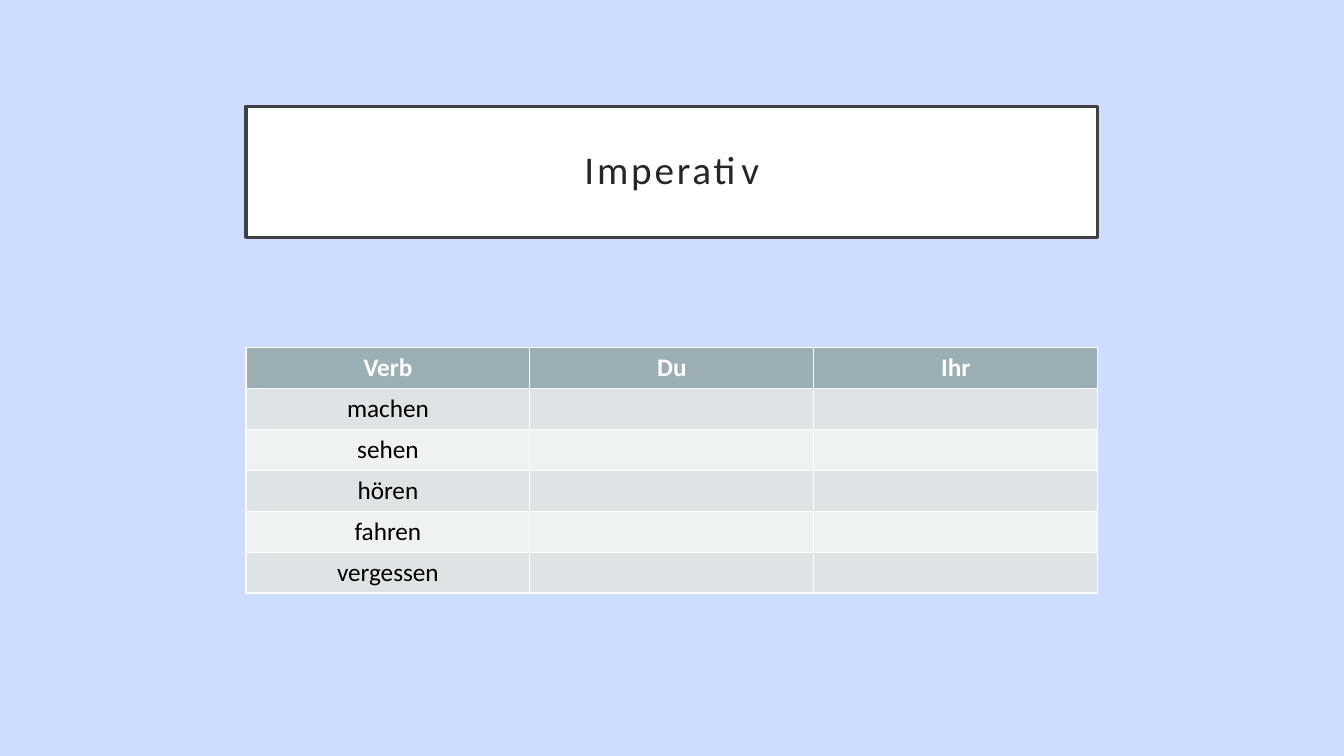
from pptx import Presentation
from pptx.dml.color import RGBColor
from pptx.enum.text import MSO_ANCHOR, PP_ALIGN
from pptx.util import Pt

BACKGROUND = RGBColor(0xCD, 0xDC, 0xFF)
WHITE = RGBColor(0xFF, 0xFF, 0xFF)
BLACK = RGBColor(0x00, 0x00, 0x00)
FRAME = RGBColor(0x40, 0x40, 0x40)
TITLE_TEXT = RGBColor(0x26, 0x26, 0x26)
HEADER_FILL = RGBColor(0x9B, 0xAF, 0xB5)
BANDS = [RGBColor(0xDE, 0xE3, 0xE5), RGBColor(0xEF, 0xF2, 0xF3)]

FONT = "Calibri"
LEFT, WIDTH = Pt(175.7), Pt(608.4)
ROW_HEIGHT = 29.2
HEADINGS = ["Verb", "Du", "Ihr"]
VERBS = ["machen", "sehen", "hören", "fahren", "vergessen"]


def add_centred_run(para, text, size, color, bold=False):
    para.alignment = PP_ALIGN.CENTER
    span = para.add_run()
    span.text = text
    span.font.name = FONT
    span.font.size = Pt(size)
    span.font.bold = bold
    span.font.color.rgb = color
    return span


deck = Presentation()
deck.slide_width, deck.slide_height = Pt(960), Pt(540)
page = deck.slides.add_slide(deck.slide_layouts[5])
page.background.fill.solid()
page.background.fill.fore_color.rgb = BACKGROUND

# Framed title
title = page.shapes.title
title.left, title.top, title.width, title.height = LEFT, Pt(75.9), WIDTH, Pt(93.6)
title.fill.solid()
title.fill.fore_color.rgb = WHITE
title.line.color.rgb = FRAME
title.line.width = Pt(2.5)
frame = title.text_frame
frame.word_wrap = True
frame.vertical_anchor = MSO_ANCHOR.MIDDLE
frame.margin_left = frame.margin_right = Pt(14.4)
frame.margin_top = frame.margin_bottom = Pt(14.4)
para = frame.paragraphs[0]
para.line_spacing = 0.9
span = add_centred_run(para, "Imperativ", 28, TITLE_TEXT)
span.font._element.set("spc", "200")  # letter spacing of 2 pt

# Verb table; the default table style draws the white grid
rows = [HEADINGS] + [[verb, "", ""] for verb in VERBS]
table = page.shapes.add_table(
    len(rows), len(HEADINGS), LEFT, Pt(248.4), WIDTH, Pt(ROW_HEIGHT * len(rows))
).table
for row_index, texts in enumerate(rows):
    is_header = row_index == 0
    table.rows[row_index].height = Pt(ROW_HEIGHT)
    for column_index, text in enumerate(texts):
        cell = table.cell(row_index, column_index)
        cell.fill.solid()
        cell.fill.fore_color.rgb = HEADER_FILL if is_header else BANDS[(row_index - 1) % 2]
        if text:
            add_centred_run(cell.text_frame.paragraphs[0], text, 18,
                            WHITE if is_header else BLACK, is_header)

deck.save("out.pptx")
